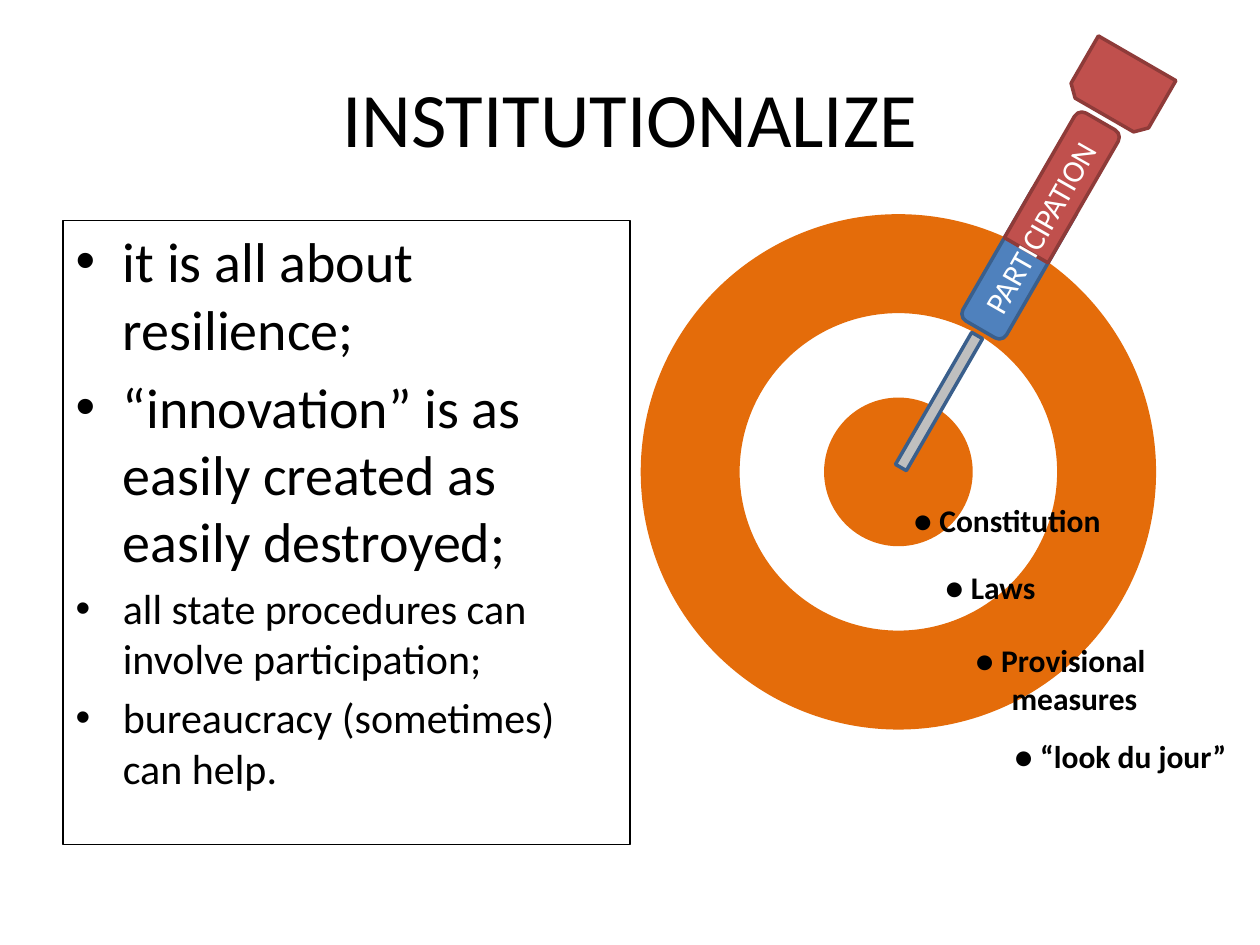
from dataclasses import dataclass
from math import cos, radians, sin

from pptx import Presentation
from pptx import util as u
from pptx.dml.color import RGBColor
from pptx.enum import shapes, text

COLS, ROWS = 100, 75          # slide grid
W, H = u.Inches(10), u.Inches(7.5)
KIND = shapes.MSO_SHAPE


@dataclass(frozen=True)
class Theme:
    font: str = "Calibri"
    ink: str = "000000"
    light: str = "FFFFFF"
    ring: str = "E46C0A"
    blue: str = "4F81BD"
    blue_edge: str = "3A5F8C"
    red: str = "C0504D"
    red_edge: str = "8E3B39"
    steel: str = "BFBFBF"
    title: int = 44
    large: int = 32
    medium: int = 24
    label: int = 18
    edge: float = 2


T = Theme()


def box(left, top, width, height):
    """Grid columns and rows to slide lengths."""
    return (int(W * left / COLS), int(H * top / ROWS),
            int(W * width / COLS), int(H * height / ROWS))


def centred(x, y, width, height):
    return x - width / 2, y - height / 2, width, height


def place(sp, area):
    sp.left, sp.top, sp.width, sp.height = box(*area)


def write(p, words, size=T.label, color=T.ink, bold=None, align=None, hang=0):
    r = p.add_run()
    r.text = words
    r.font.name, r.font.size, r.font.bold = T.font, u.Pt(size), bold
    r.font.color.rgb = RGBColor.from_string(color)
    if align is not None:
        p.alignment = align
    if hang:
        pPr = p._p.get_or_add_pPr()
        indent = int(W * hang / COLS)
        pPr.set("marL", str(indent))
        pPr.set("indent", str(-indent))


def add_shape(parent, kind, area, fill, edge=None, turn=0):
    sp = parent.add_shape(kind, *box(*area))
    sp.shadow.inherit = False
    sp.rotation = turn
    sp.fill.solid()
    sp.fill.fore_color.rgb = RGBColor.from_string(fill)
    if edge:
        sp.line.color.rgb = RGBColor.from_string(edge)
        sp.line.width = u.Pt(T.edge)
    else:
        sp.line.fill.background()
    return sp


def add_text(s, words, area, turn=0, anchor=text.MSO_ANCHOR.TOP, **fmt):
    sp = s.shapes.add_textbox(*box(*area))
    sp.rotation = turn
    tf = sp.text_frame
    tf.word_wrap = True
    tf.vertical_anchor = anchor
    write(tf.paragraphs[0], words, **fmt)
    return sp


def add_title(s, words):
    sp = s.shapes.title
    place(sp, (5, 3, 90, 12.5))
    sp.text_frame.vertical_anchor = text.MSO_ANCHOR.MIDDLE
    write(sp.text_frame.paragraphs[0], words, size=T.title,
          align=text.PP_ALIGN.CENTER)


def add_list(s, items):
    sp = s.placeholders[1]
    place(sp, (5, 17.5, 45, 49.5))
    sp.line.color.rgb = RGBColor.from_string(T.ink)
    sp.line.width = u.Pt(0.75)
    tf = sp.text_frame
    tf.auto_size = text.MSO_AUTO_SIZE.NONE
    for i, (words, size) in enumerate(items):
        p = tf.add_paragraph() if i else tf.paragraphs[0]
        write(p, words, size=size)


def add_target(s, x, y):
    ring = add_shape(s.shapes, KIND.DONUT, centred(x, y, 40.9, 40.9), T.ring)
    ring.adjustments[0] = 0.192
    add_shape(s.shapes, KIND.OVAL, centred(x, y, 11.8, 11.8), T.ring)


def add_dart(s, x, y, turn=30):
    """Parts sit on one axis, each at a distance from the tip at x, y."""
    parts = [
        (KIND.ROUND_2_SAME_RECTANGLE, 18.55, 4, 11.8, T.blue, T.blue_edge, 180),
        (KIND.SNIP_2_SAME_RECTANGLE, 34.9, 7.1, 5.2, T.red, T.red_edge, 180),
        (KIND.ROUND_2_SAME_RECTANGLE, 25.8, 4, 11.8, T.red, T.red_edge, 0),
        (KIND.RECTANGLE, 6.05, 1, 12.1, T.steel, T.blue_edge, 180),
    ]
    group = s.shapes.add_group_shape()
    a = radians(turn)
    for kind, far, width, height, fill, edge, flip in parts:
        area = centred(x + far * sin(a), y - far * cos(a), width, height)
        add_shape(group.shapes, kind, area, fill, edge, turn + flip)
    add_text(s, "PARTICIPATION", centred(82.5, 18.05, 23.6, 7.1), turn=299.6,
             anchor=text.MSO_ANCHOR.MIDDLE, color=T.light,
             align=text.PP_ALIGN.CENTER)


def add_labels(s, labels):
    for words, left, top, height, hang in labels:
        add_text(s, "● " + words, (left, top, 21.7, height), bold=True,
                 hang=hang)


def main():
    prs = Presentation()
    prs.slide_width, prs.slide_height = W, H
    s = prs.slides.add_slide(prs.slide_layouts[1])

    # Title and list
    add_title(s, "INSTITUTIONALIZE")
    add_list(s, [
        ("it is all about resilience;", T.large),
        ("“innovation” is as easily created as easily destroyed;", T.large),
        ("all state procedures can involve participation;", T.medium),
        ("bureaucracy (sometimes) can help.", T.medium),
    ])

    # Target with its levels, then the dart on top
    add_target(s, 71.3, 37.45)
    add_labels(s, [
        ("Constitution", 71.5, 39.3, 4, 0),
        ("Laws", 74, 44.6, 4, 0),
        ("Provisional measures", 76.4, 50.4, 7.1, 2.9),
        ("“look du jour”", 79.5, 58, 4, 0),
    ])
    add_dart(s, 71.5, 37.1)
    prs.save("out.pptx")


if __name__ == "__main__":
    main()
